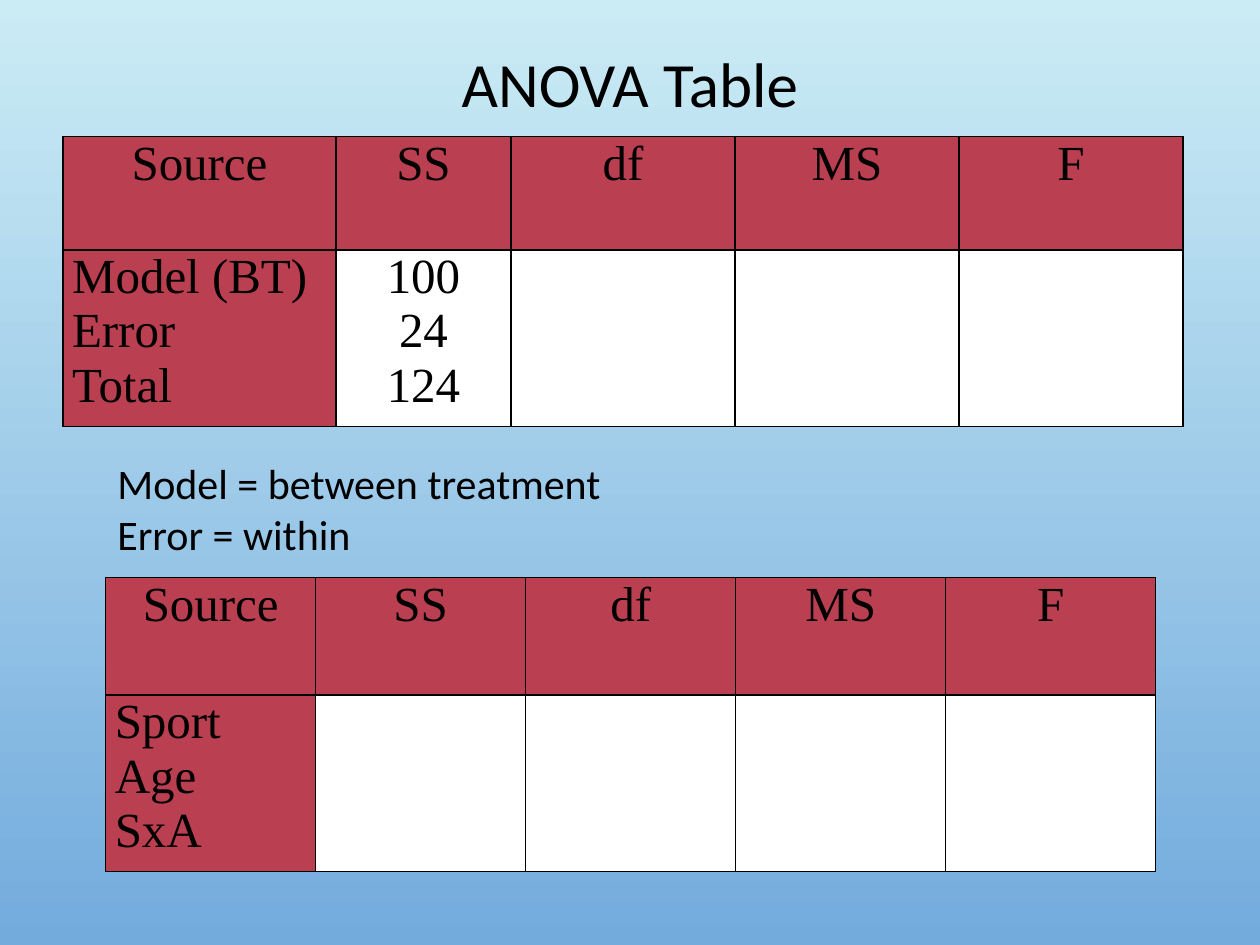
from lxml.etree import SubElement
from pptx import Presentation
from pptx.dml.color import RGBColor
from pptx.enum.text import MSO_ANCHOR, PP_ALIGN
from pptx.oxml.ns import qn
from pptx.util import Pt

BLACK, WHITE, RED = "000000", "FFFFFF", "BA3F51"
HEADINGS = ["Source", "SS", "df", "MS", "F"]


def color(hex_text):
    return RGBColor.from_string(hex_text)


class AnovaSlide:
    body_font = "Calibri"
    table_font = "Times New Roman"
    table_size = 28

    def __init__(self, deck):
        self.slide = deck.slides.add_slide(deck.slide_layouts[6])

    def background(self, top, bottom):
        fill = self.slide.background.fill
        fill.gradient()
        fill.gradient_angle = 270
        for stop, shade, position in zip(fill.gradient_stops, (top, bottom), (0, 1)):
            stop.color.rgb = color(shade)
            stop.position = position

    def set_text(self, frame, text, font, size, align):
        frame.text = text
        for para in frame.paragraphs:
            para.alignment = align
            para.font.size = Pt(size)
            for span in para.runs:
                span.font.name = font
                span.font.size = Pt(size)
                span.font.color.rgb = color(BLACK)

    def text(self, left, top, width, height, text, size,
             align=PP_ALIGN.LEFT, anchor=MSO_ANCHOR.TOP, line_spacing=1.0):
        box = self.slide.shapes.add_textbox(Pt(left), Pt(top), Pt(width), Pt(height))
        frame = box.text_frame
        frame.word_wrap = True
        frame.vertical_anchor = anchor
        self.set_text(frame, text, self.body_font, size, align)
        for para in frame.paragraphs:
            para.line_spacing = line_spacing

    def borders(self, cell):
        properties = cell._tc.get_or_add_tcPr()
        for side in ("a:lnL", "a:lnR", "a:lnT", "a:lnB"):
            line = SubElement(properties, qn(side), w=str(Pt(1)))
            fill = SubElement(line, qn("a:solidFill"))
            SubElement(fill, qn("a:srgbClr"), val=BLACK)

    def table(self, left, top, widths, heights, body):
        """Add a table with the ANOVA headings above one row of body cells."""
        rows = [HEADINGS, body]
        table = self.slide.shapes.add_table(
            len(rows), len(widths), Pt(left), Pt(top), Pt(sum(widths)), Pt(sum(heights))
        ).table
        table.first_row = table.horz_banding = False
        for column, width in zip(table.columns, widths):
            column.width = Pt(width)
        for r, (values, height) in enumerate(zip(rows, heights)):
            table.rows[r].height = Pt(height)
            for c, value in enumerate(values):
                cell = table.cell(r, c)
                is_heading = r == 0 or c == 0
                is_label = r > 0 and c == 0
                cell.margin_left = cell.margin_right = Pt(5.2)
                cell.margin_top = cell.margin_bottom = 0
                self.borders(cell)
                cell.fill.solid()
                cell.fill.fore_color.rgb = color(RED if is_heading else WHITE)
                align = PP_ALIGN.LEFT if is_label else PP_ALIGN.CENTER
                self.set_text(cell.text_frame, value, self.table_font, self.table_size, align)


def main():
    deck = Presentation()
    deck.slide_width, deck.slide_height = Pt(720), Pt(540)
    page = AnovaSlide(deck)
    page.background("CBECF5", "73ABDD")
    page.text(36, 21.6, 648, 56, "ANOVA Table", 36,
              PP_ALIGN.CENTER, MSO_ANCHOR.MIDDLE, 0.9)
    page.table(36, 78, [156, 100, 128, 128, 128], [64.8, 97.2],
               ["Model (BT)\nError\nTotal", "100\n24\n124", "", "", ""])
    page.text(60, 258, 390, 65.5, "Model = between treatment\nError = within", 24)
    page.table(60.4, 330, [120] * 5, [67.2, 100.8],
               ["Sport\nAge\nSxA", "", "", "", ""])
    deck.save("out.pptx")


if __name__ == "__main__":
    main()
